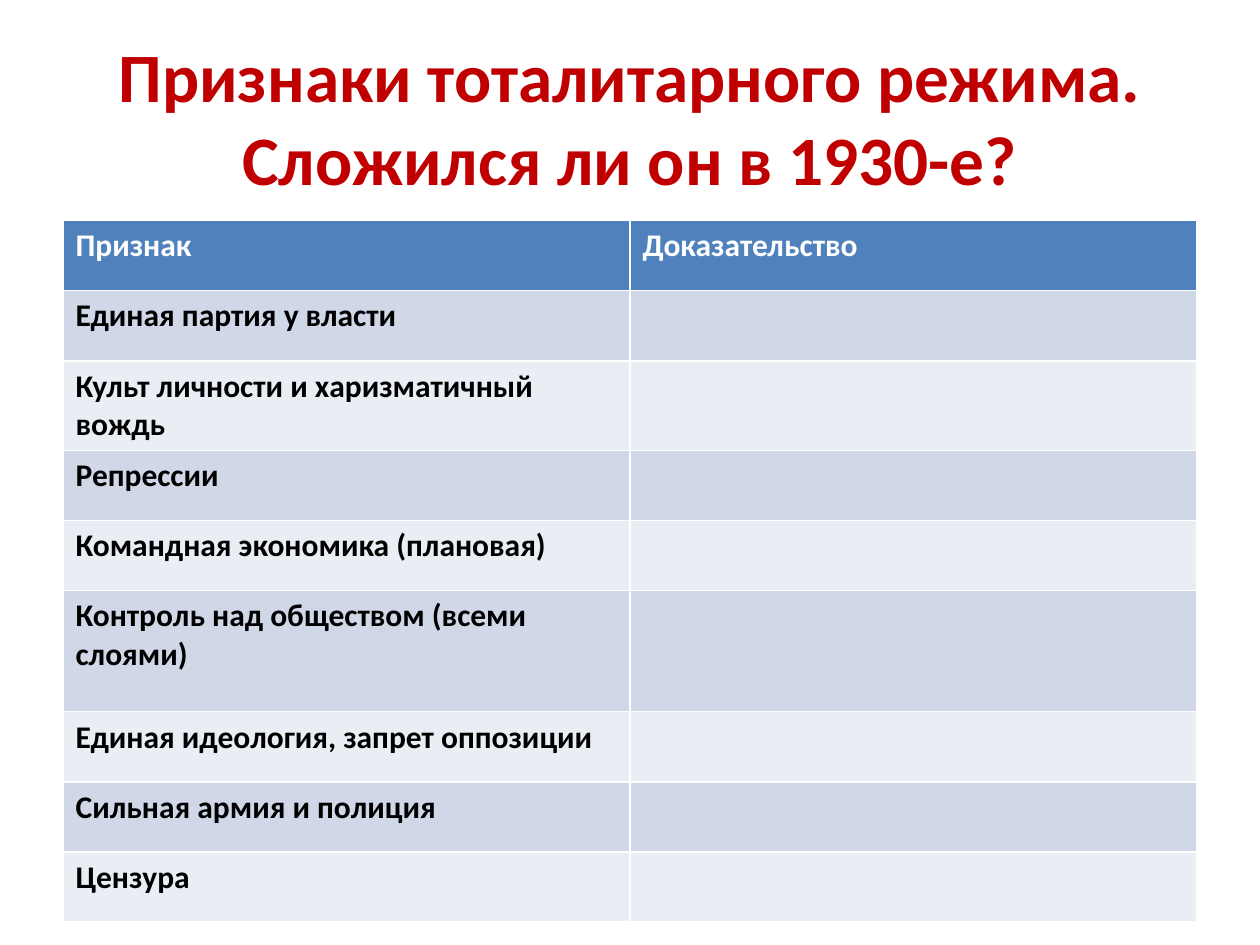
from pptx import Presentation
from pptx.dml.color import RGBColor
from pptx.enum.text import MSO_ANCHOR, PP_ALIGN
from pptx.util import Pt

CENTER, MIDDLE = PP_ALIGN.CENTER, MSO_ANCHOR.MIDDLE
FONT = "Calibri"
COLORS = {
    "title": "C00000",
    "header": "4F81BD",
    "header_text": "FFFFFF",
    "odd_row": "D0D8E8",
    "even_row": "E9EDF4",
    "text": "000000",
}
TITLE = ["Признаки тоталитарного режима.", "Сложился ли он в 1930-е?"]
HEADERS = ["Признак", "Доказательство"]
SIGNS = [
    "Единая партия у власти",
    "Культ личности и харизматичный вождь",
    "Репрессии",
    "Командная экономика (плановая)",
    "Контроль над обществом (всеми слоями)",
    "Единая идеология, запрет оппозиции",
    "Сильная армия и полиция",
    "Цензура",
]
ROW_HEIGHT, TALL_ROW_HEIGHT, TALL_ROW = 40.1, 69.2, 5


def add_run(p, text, size, color):
    r = p.add_run()
    r.text = text
    r.font.name = FONT
    r.font.size = Pt(size)
    r.font.bold = True
    r.font.color.rgb = RGBColor.from_string(COLORS[color])


prs = Presentation()
prs.slide_width, prs.slide_height = Pt(720), Pt(540)
slide = prs.slides.add_slide(prs.slide_layouts[5])

# Title
title = slide.shapes.title
title.left, title.top, title.width, title.height = Pt(36), Pt(21.6), Pt(648), Pt(90)
tf = title.text_frame
tf.word_wrap = True
tf.vertical_anchor = MIDDLE
p = tf.paragraphs[0]
p.alignment = CENTER
add_run(p, TITLE[0], 39.6, "title")
p.add_line_break()
add_run(p, TITLE[1], 39.6, "title")

# Table: the second column is left for the answers
rows = [HEADERS] + [[sign, ""] for sign in SIGNS]
table_height = ROW_HEIGHT * (len(rows) - 1) + TALL_ROW_HEIGHT
table = slide.shapes.add_table(
    len(rows), len(HEADERS), Pt(36), Pt(126), Pt(648), Pt(table_height)
).table
for i, row in enumerate(rows):
    table.rows[i].height = Pt(TALL_ROW_HEIGHT if i == TALL_ROW else ROW_HEIGHT)
    fill = "header" if i == 0 else "odd_row" if i % 2 else "even_row"
    for j, text in enumerate(row):
        cell = table.cell(i, j)
        cell.fill.solid()
        cell.fill.fore_color.rgb = RGBColor.from_string(COLORS[fill])
        if text:
            add_run(cell.text_frame.paragraphs[0], text, 18,
                    "header_text" if i == 0 else "text")

prs.save("out.pptx")
